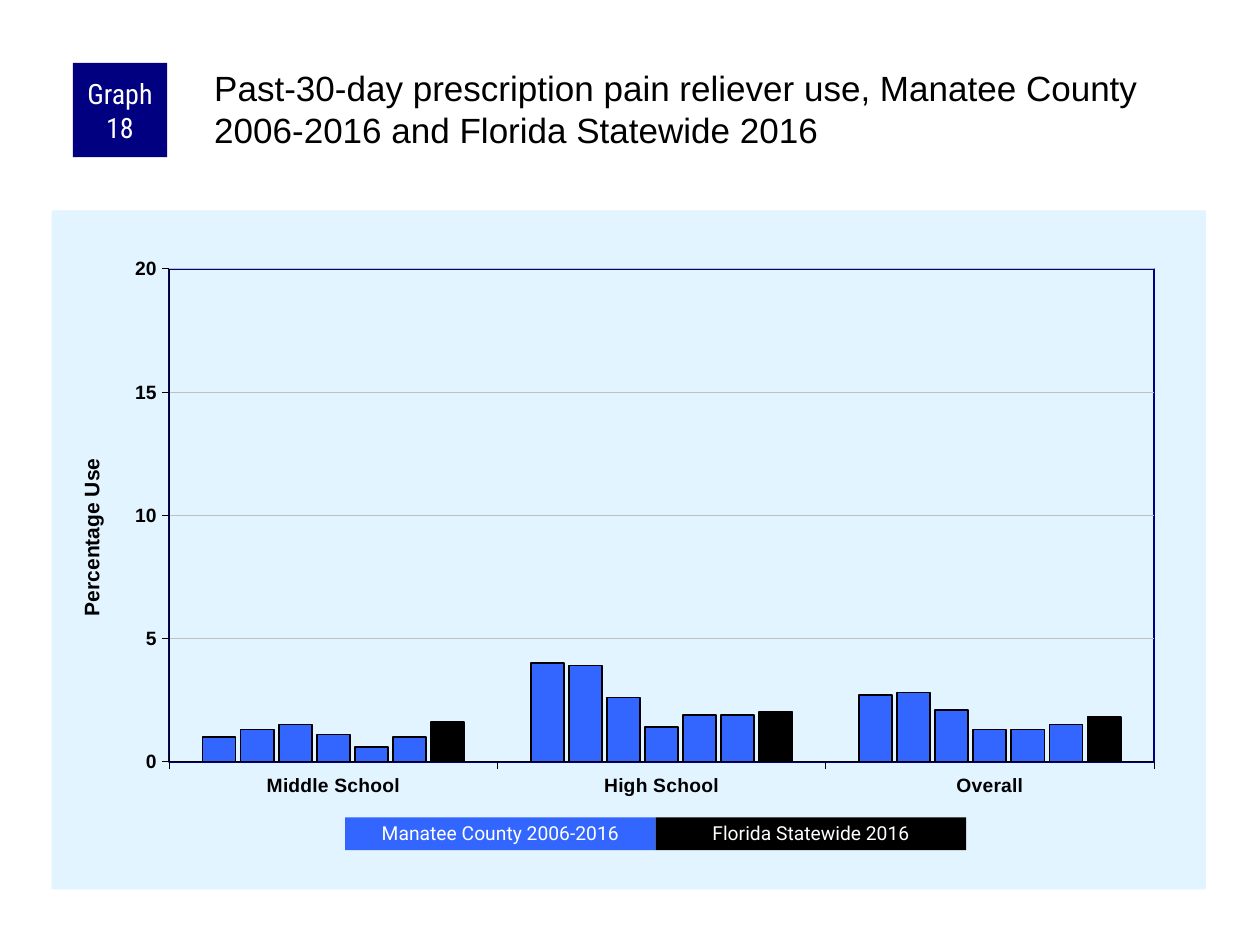
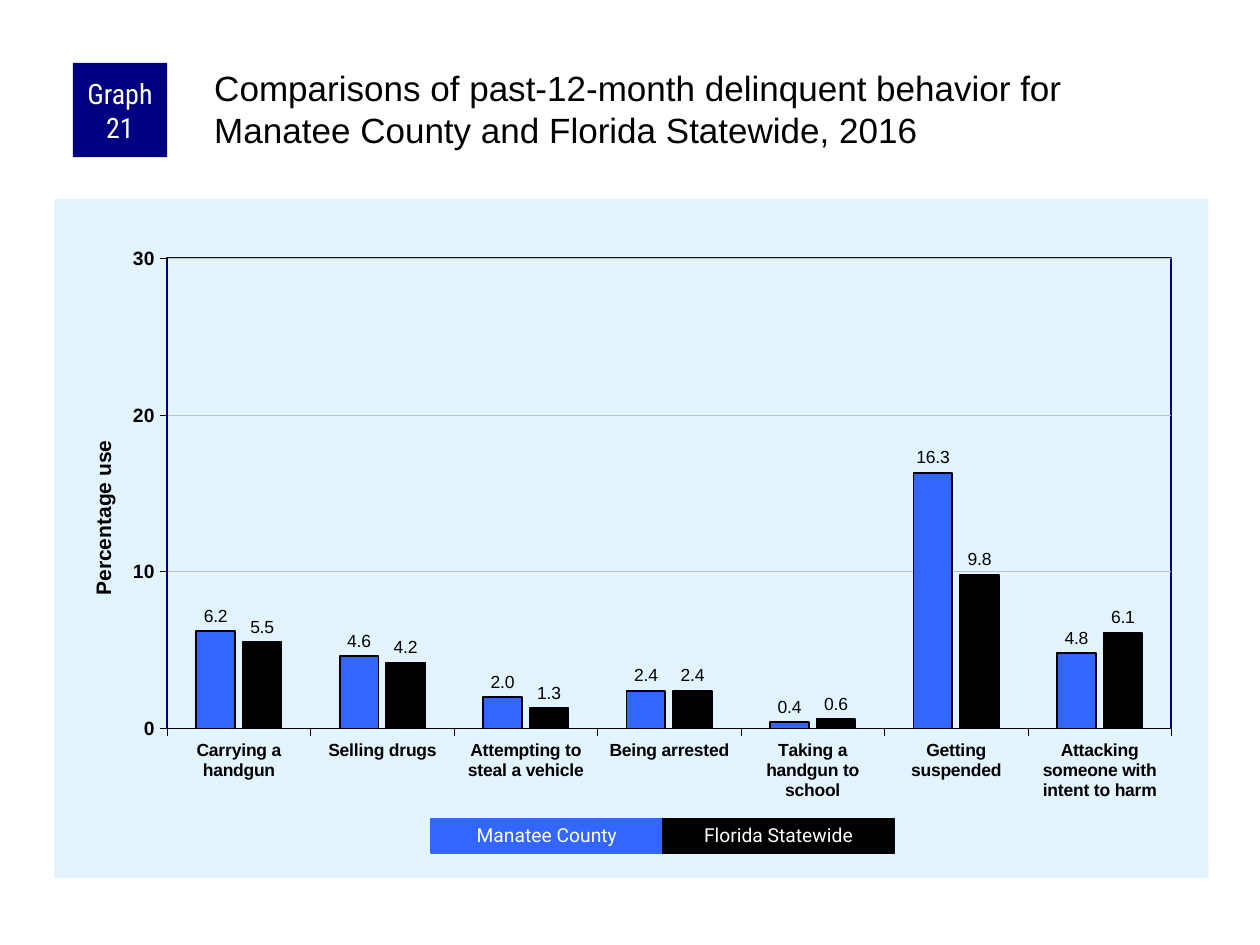
from lxml import etree
from pptx import Presentation
from pptx.chart.data import CategoryChartData
from pptx.dml.color import RGBColor
from pptx.enum.chart import XL_CHART_TYPE as ChartType
from pptx.enum.chart import XL_LABEL_POSITION as LabelPosition
from pptx.enum.chart import XL_TICK_MARK as TickMark
from pptx.enum.shapes import MSO_SHAPE as Shape
from pptx.enum.text import MSO_ANCHOR as Anchor
from pptx.enum.text import PP_ALIGN as Align
from pptx.oxml import parse_xml
from pptx.oxml.ns import nsdecls, qn
from pptx.util import Cm, Pt

NAVY = RGBColor(0x00, 0x00, 0x80)
BLUE = RGBColor(0x33, 0x66, 0xFF)
BLACK = RGBColor(0x00, 0x00, 0x00)
WHITE = RGBColor(0xFF, 0xFF, 0xFF)
PALE = RGBColor(0xE1, 0xF4, 0xFF)
GREY = RGBColor(0xC0, 0xC0, 0xC0)

BADGE_BOX = (1.47, 1.27, 1.9, 1.9)
TITLE_BOX = (4.24, 1.27, 20.12, 2.11)

GRAPHS = [
    {
        "badge": "Graph 18",
        "title": "Past-30-day prescription pain reliever use, "
                 "Manatee County 2006-2016 and Florida Statewide 2016",
        "box": (1.04, 4.24, 23.27, 13.69),
        "plot": (0.102, 0.086, 0.853, 0.726),
        "axis_title": "Percentage Use",
        "axis_title_at": (0.02, 0.36),
        "categories": ["Middle School", "High School", "Overall"],
        "county": [
            (1, 4, 2.7), (1.3, 3.9, 2.8), (1.5, 2.6, 2.1),
            (1.1, 1.4, 1.3), (0.6, 1.9, 1.3), (1, 1.9, 1.5),
        ],
        "state": (1.6, 2, 1.8),
        "scale": (20, 5),
        "bars": {"gap_width": 200, "overlap": -15},
        "category_size": 11,
        "labels": False,
        "legend": ("Manatee County 2006-2016", "Florida Statewide 2016"),
        "legend_box": (5.92, 12.24, 6.26, 0.66),
        "legend_line": False,
    },
    {
        "badge": "Graph 21",
        "title": "Comparisons of past-12-month delinquent behavior for "
                 "Manatee County and Florida Statewide, 2016",
        "box": (1.09, 4.01, 23.27, 13.69),
        "plot": (0.098, 0.087, 0.87, 0.693),
        "axis_title": "Percentage use",
        "axis_title_at": (0.028, 0.35),
        "categories": [
            "Carrying a handgun", "Selling drugs",
            "Attempting to steal a vehicle", "Being arrested",
            "Taking a handgun to school", "Getting suspended",
            "Attacking someone with intent to harm",
        ],
        "county": [(6.2, 4.6, 2, 2.4, 0.4, 16.3, 4.8)],
        "state": (5.5, 4.2, 1.3, 2.4, 0.6, 9.8, 6.1),
        "scale": (30, 10),
        "bars": {"gap_width": 150, "overlap": -20},
        "category_size": 10,
        "labels": True,
        "legend": ("Manatee County", "Florida Statewide"),
        "legend_box": (7.6, 12.5, 4.67, 0.69),
        "legend_line": True,
    },
]


def set_format(target, values):
    """Set each attribute named in values on the target."""
    for name, value in values.items():
        setattr(target, name, value)


def set_font(font, face, size, color, bold=False):
    """Give a font its face, size, colour and weight."""
    set_format(font, {"name": face, "size": Pt(size), "bold": bold})
    font.color.rgb = color


def set_line(line, color, width):
    """Give a line its colour and width."""
    line.color.rgb = color
    line.width = Pt(width)


def write_text(shape, text, font, frame_format, para_format):
    """Write one formatted paragraph in a shape."""
    frame = shape.text_frame
    set_format(frame, {"word_wrap": True, **frame_format})
    para = frame.paragraphs[0]
    set_format(para, para_format)
    span = para.add_run()
    span.text = text
    set_font(span.font, *font)


def add_block(page, box, fill, text, font, frame_format, para_format):
    """Add a filled rectangle with centred text."""
    block = page.shapes.add_shape(Shape.RECTANGLE, *map(Cm, box))
    block.shadow.inherit = False
    block.fill.solid()
    block.fill.fore_color.rgb = fill
    block.line.fill.background()
    write_text(block, text, font,
               {"vertical_anchor": Anchor.MIDDLE, **frame_format},
               {"alignment": Align.CENTER, **para_format})
    return block


def add_heading(page, badge, title):
    """Add the numbered badge and the title beside it."""
    margins = {"margin_left": Cm(0.13), "margin_right": Cm(0.13),
               "margin_top": 0, "margin_bottom": 0}
    add_block(page, BADGE_BOX, NAVY, badge,
              ("Roboto Condensed", 16, WHITE), margins, {})
    heading = page.shapes.add_textbox(*map(Cm, TITLE_BOX))
    margins = {"margin_left": Cm(0.08), "margin_right": 0,
               "margin_top": Cm(0.08), "margin_bottom": 0}
    write_text(heading, title, ("Arial", 20, BLACK), margins, {})


def place_part(parent, index, values, inner=False):
    """Fix the layout of a chart part as fractions of the chart."""
    for old in parent.findall(qn("c:layout")):
        parent.remove(old)
    layout = parse_xml(f"<c:layout {nsdecls('c')}><c:manualLayout/></c:layout>")
    settings = [("layoutTarget", "inner")] if inner else []
    settings += [("xMode", "edge"), ("yMode", "edge")]
    settings += zip("xywh", values)
    for name, value in settings:
        etree.SubElement(layout[0], qn(f"c:{name}")).set("val", str(value))
    parent.insert(index, layout)


def paint_areas(chart):
    """Fill the chart area and frame the plot area."""
    space = chart._chartSpace
    area = parse_xml(
        f"<c:spPr {nsdecls('c', 'a')}><a:solidFill><a:srgbClr val='{PALE}'/>"
        "</a:solidFill><a:ln><a:noFill/></a:ln></c:spPr>")
    space.find(qn("c:chart")).addnext(area)
    frame = parse_xml(
        f"<c:spPr {nsdecls('c', 'a')}><a:noFill/><a:ln w='12700'><a:solidFill>"
        f"<a:srgbClr val='{NAVY}'/></a:solidFill></a:ln></c:spPr>")
    space.chart.plotArea.append(frame)


def style_axes(chart, graph):
    """Style both axes, the gridlines and the value axis title."""
    sizes = (graph["category_size"], 11)
    for axis, size in zip((chart.category_axis, chart.value_axis), sizes):
        set_format(axis, {"major_tick_mark": TickMark.OUTSIDE,
                          "minor_tick_mark": TickMark.NONE})
        set_font(axis.tick_labels.font, "Arial", size, BLACK, True)
        set_line(axis.format.line, BLACK, 0.25)
    axis = chart.value_axis
    top, step = graph["scale"]
    set_format(axis, {"minimum_scale": 0, "maximum_scale": top,
                      "major_unit": step, "has_major_gridlines": True})
    set_line(axis.major_gridlines.format.line, GREY, 0.25)
    frame = axis.axis_title.text_frame
    frame.text = graph["axis_title"]
    set_font(frame.paragraphs[0].runs[0].font, "Arial", 12, BLACK, True)
    place_part(axis.axis_title._element, 1, graph["axis_title_at"])


def style_bars(plot, graph):
    """Colour the bars and show their values where asked."""
    set_format(plot, {"vary_by_categories": False, **graph["bars"]})
    colors = [BLUE] * len(graph["county"]) + [BLACK]
    for series, color in zip(plot.series, colors):
        series.format.fill.solid()
        series.format.fill.fore_color.rgb = color
        series.invert_if_negative = False
        set_line(series.format.line, BLACK, 1)
        if graph["labels"]:
            labels = series.data_labels
            set_format(labels, {"show_value": True, "number_format": "0.0",
                                "number_format_is_linked": False,
                                "position": LabelPosition.OUTSIDE_END})
            set_font(labels.font, "Arial", 10, BLACK)


def add_bar_chart(page, graph):
    """Add the clustered column chart in its box."""
    data = CategoryChartData()
    data.categories = graph["categories"]
    for number, values in enumerate([*graph["county"], graph["state"]], 1):
        data.add_series(f"Series {number}", values)
    chart = page.shapes.add_chart(
        ChartType.COLUMN_CLUSTERED, *map(Cm, graph["box"]), data).chart
    set_format(chart, {"has_legend": False, "has_title": False})
    set_font(chart.font, "Arial", 10, BLACK)
    style_axes(chart, graph)
    style_bars(chart.plots[0], graph)
    place_part(chart._chartSpace.chart.plotArea, 0, graph["plot"], True)
    paint_areas(chart)


def add_legend(page, graph):
    """Add the two legend blocks side by side within the chart box."""
    chart_left, chart_top = graph["box"][:2]
    left, top, width, height = graph["legend_box"]
    for column, (name, color) in enumerate(zip(graph["legend"], (BLUE, BLACK))):
        box = (chart_left + left + column * width, chart_top + top, width, height)
        block = add_block(page, box, color, name, ("Roboto", 11, WHITE),
                          {}, {"line_spacing": 0.9})
        if graph["legend_line"]:
            set_line(block.line, color, 0.75)


def add_graph_page(deck, graph):
    """Add one slide with heading, chart and legend."""
    page = deck.slides.add_slide(deck.slide_layouts[6])
    add_bar_chart(page, graph)
    add_heading(page, graph["badge"], graph["title"])
    add_legend(page, graph)


def main():
    """Build and save the deck."""
    deck = Presentation()
    set_format(deck, {"slide_width": Cm(25.4), "slide_height": Cm(19.05)})
    for graph in GRAPHS:
        add_graph_page(deck, graph)
    deck.save("out.pptx")


if __name__ == "__main__":
    main()
